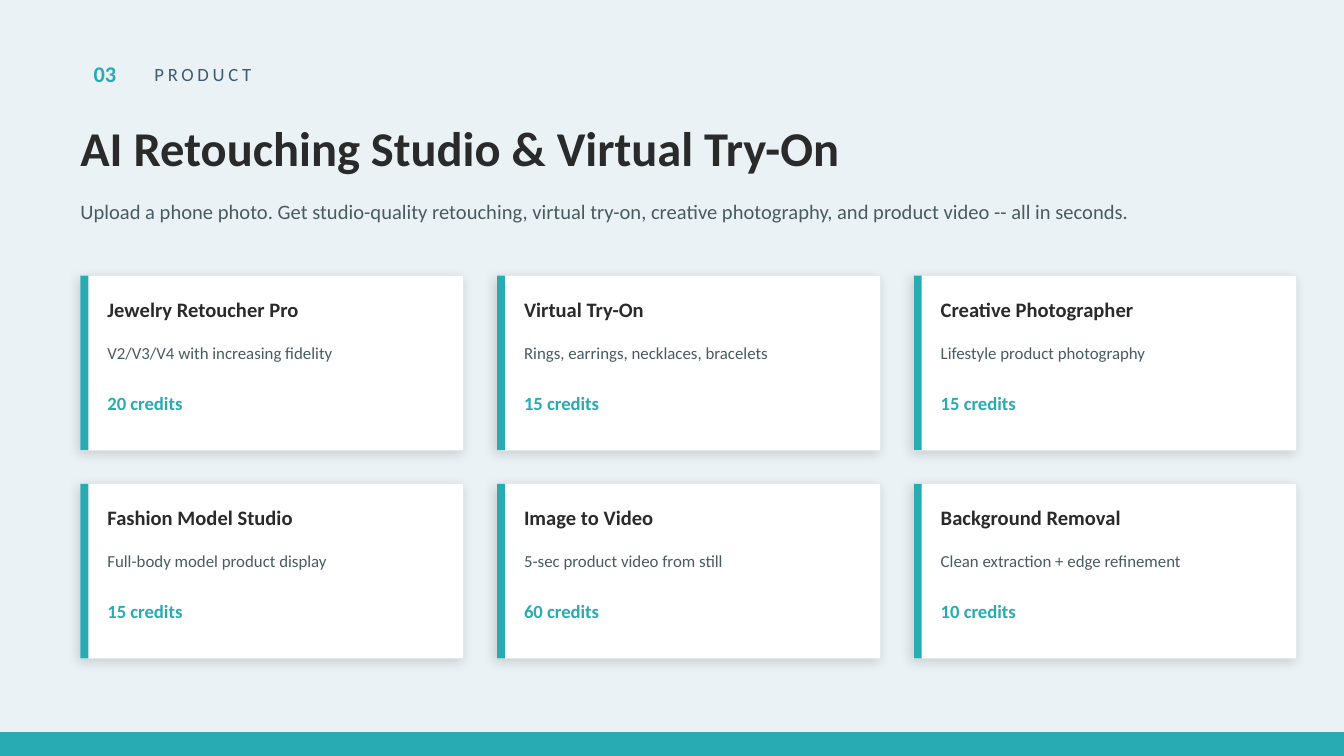
import dataclasses

import lxml.etree
import pptx
import pptx.dml.color
import pptx.enum.shapes
import pptx.enum.text
import pptx.oxml
import pptx.oxml.ns
import pptx.util
from pptx.util import Cm

COLOURS = {
    "background": "EBF2F5",
    "accent": "29ABB3",
    "heading": "2A2A2A",
    "body": "485B62",
    "section": "3D5A73",
    "card": "FFFFFF",
    "border": "E2E8F0",
    "shadow": "000000",
}
FONT = "Calibri"

SLIDE_WIDTH, SLIDE_HEIGHT = 25.4, 14.29
MARGIN_LEFT = 1.52
FOOTER_TOP = 13.84

# Card grid, in centimetres
COLUMNS = 3
GRID_TOP = 5.21
CARD_WIDTH, CARD_HEIGHT = 7.24, 3.3
CARD_GAP = 0.635
ACCENT_WIDTH = 0.15
TEXT_INDENT, TEXT_WIDTH = 0.51, 6.35


@dataclasses.dataclass
class Box:
    """A rectangle in centimetres."""
    left: float
    top: float
    width: float
    height: float

    def lengths(self) -> tuple:
        return Cm(self.left), Cm(self.top), Cm(self.width), Cm(self.height)


@dataclasses.dataclass
class Style:
    size: int
    colour: str
    bold: bool = False
    spacing: int = 0  # hundredths of a point


@dataclasses.dataclass
class Feature:
    name: str
    description: str
    price: str


FEATURES = [
    Feature("Jewelry Retoucher Pro", "V2/V3/V4 with increasing fidelity", "20 credits"),
    Feature("Virtual Try-On", "Rings, earrings, necklaces, bracelets", "15 credits"),
    Feature("Creative Photographer", "Lifestyle product photography", "15 credits"),
    Feature("Fashion Model Studio", "Full-body model product display", "15 credits"),
    Feature("Image to Video", "5-sec product video from still", "60 credits"),
    Feature("Background Removal", "Clean extraction + edge refinement", "10 credits"),
]


def colour(name: str) -> pptx.dml.color.RGBColor:
    return pptx.dml.color.RGBColor.from_string(COLOURS[name])


def add_rectangle(slide, box: Box, fill: str):
    shape = slide.shapes.add_shape(
        pptx.enum.shapes.MSO_SHAPE.RECTANGLE, *box.lengths())
    shape.shadow.inherit = False
    shape.fill.solid()
    shape.fill.fore_color.rgb = colour(fill)
    shape.line.fill.background()
    return shape


def add_text(slide, box: Box, text: str, style: Style, inset: bool = False) -> None:
    text_frame = slide.shapes.add_textbox(*box.lengths()).text_frame
    text_frame.word_wrap = True
    text_frame.vertical_anchor = pptx.enum.text.MSO_ANCHOR.MIDDLE
    if not inset:
        text_frame.margin_left = text_frame.margin_right = 0
        text_frame.margin_top = text_frame.margin_bottom = 0
    text_frame.text = text
    run = text_frame.paragraphs[0].runs[0]
    run.font.name = FONT
    run.font.size = pptx.util.Pt(style.size)
    run.font.bold = style.bold
    run.font.color.rgb = colour(style.colour)
    if style.spacing:
        run.font._element.set("spc", str(style.spacing))


def add_soft_shadow(shape) -> None:
    """Blur 6 pt, distance 2 pt, direction 135 degrees, 15 % opaque."""
    qn = pptx.oxml.ns.qn
    effects = shape._element.spPr.find(qn("a:effectLst"))
    shadow = lxml.etree.SubElement(
        effects, qn("a:outerShdw"), blurRad=str(pptx.util.Pt(6)),
        dist=str(pptx.util.Pt(2)), dir=str(135 * 60000),
        algn="bl", rotWithShape="0")
    tint = lxml.etree.SubElement(shadow, qn("a:srgbClr"), val=COLOURS["shadow"])
    lxml.etree.SubElement(tint, qn("a:alpha"), val="15000")


def add_card(slide, left: float, top: float, feature: Feature) -> None:
    card = add_rectangle(slide, Box(left, top, CARD_WIDTH, CARD_HEIGHT), "card")
    card.line.color.rgb = colour("border")
    card.line.width = pptx.util.Pt(0.5)
    add_soft_shadow(card)
    add_rectangle(slide, Box(left, top, ACCENT_WIDTH, CARD_HEIGHT), "accent")

    rows = [
        (feature.name, 0.25, 0.76, Style(11, "heading", bold=True)),
        (feature.description, 1.02, 0.89, Style(9, "body")),
        (feature.price, 2.03, 0.76, Style(10, "accent", bold=True)),
    ]
    for text, offset, height, style in rows:
        box = Box(left + TEXT_INDENT, top + offset, TEXT_WIDTH, height)
        add_text(slide, box, text, style)


def main() -> None:
    presentation = pptx.Presentation()
    presentation.slide_width = Cm(SLIDE_WIDTH)
    presentation.slide_height = Cm(SLIDE_HEIGHT)
    slide = presentation.slides.add_slide(presentation.slide_layouts[6])
    slide.background.fill.solid()
    slide.background.fill.fore_color.rgb = colour("background")

    # Footer bar
    add_rectangle(
        slide, Box(0, FOOTER_TOP, SLIDE_WIDTH, SLIDE_HEIGHT - FOOTER_TOP), "accent")

    # Section number and label
    add_text(slide, Box(MARGIN_LEFT, 0.89, 1.27, 1.02), "03",
             Style(12, "accent", bold=True), inset=True)
    add_text(slide, Box(2.67, 0.89, 12.7, 1.02), "PRODUCT",
             Style(10, "section", spacing=200), inset=True)

    # Title and subtitle
    add_text(slide, Box(MARGIN_LEFT, 2.03, 22.35, 1.52),
             "AI Retouching Studio & Virtual Try-On",
             Style(26, "heading", bold=True))
    add_text(slide, Box(MARGIN_LEFT, 3.43, 22.35, 1.14),
             "Upload a phone photo. Get studio-quality retouching, virtual try-on, "
             "creative photography, and product video -- all in seconds.",
             Style(11, "body"))

    # Feature cards
    for index, feature in enumerate(FEATURES):
        row, column = divmod(index, COLUMNS)
        add_card(slide, MARGIN_LEFT + column * (CARD_WIDTH + CARD_GAP),
                 GRID_TOP + row * (CARD_HEIGHT + CARD_GAP), feature)

    presentation.save("out.pptx")


if __name__ == "__main__":
    main()
